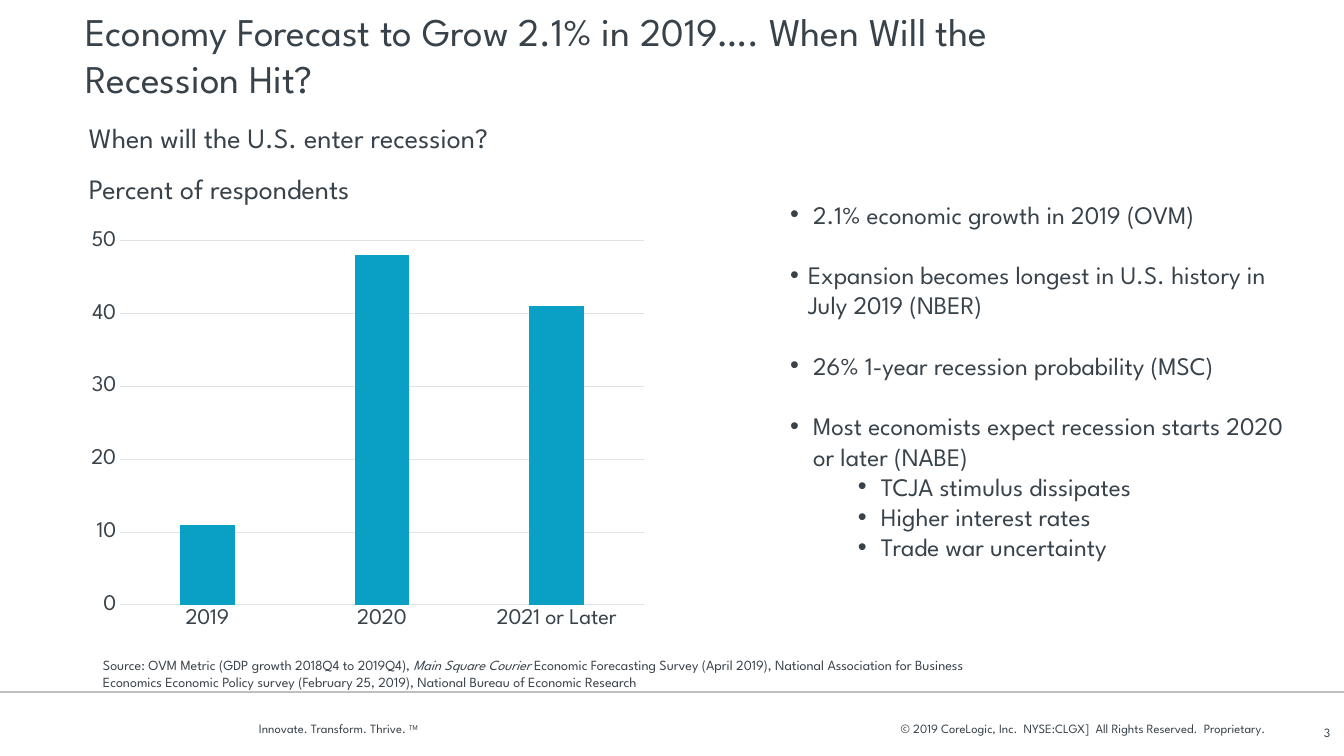
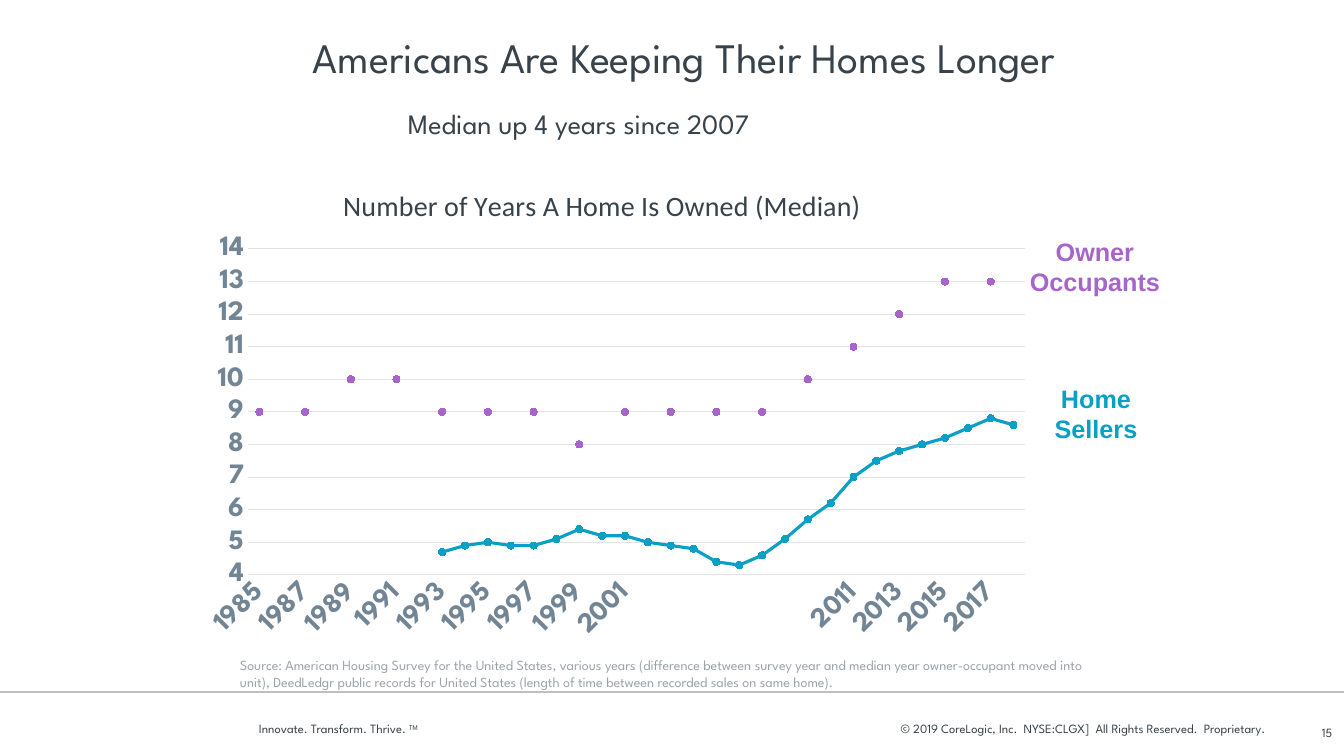
"""Build two housing economy slides with native charts and text."""
from dataclasses import dataclass

from lxml import etree
from pptx import Presentation
from pptx.chart.data import CategoryChartData
from pptx.dml.color import RGBColor
from pptx.enum.chart import XL_CHART_TYPE, XL_MARKER_STYLE, XL_TICK_MARK
from pptx.enum.shapes import MSO_CONNECTOR
from pptx.enum.text import MSO_ANCHOR, PP_ALIGN
from pptx.oxml.ns import qn
from pptx.util import Pt

PX = 914400 / 100.8
LEFT, CENTER, RIGHT = PP_ALIGN.LEFT, PP_ALIGN.CENTER, PP_ALIGN.RIGHT
TOP, MIDDLE, BOTTOM = MSO_ANCHOR.TOP, MSO_ANCHOR.MIDDLE, MSO_ANCHOR.BOTTOM
COLUMNS, LINES = XL_CHART_TYPE.COLUMN_CLUSTERED, XL_CHART_TYPE.LINE_MARKERS
CIRCLE, NO_TICK = XL_MARKER_STYLE.CIRCLE, XL_TICK_MARK.NONE
STRAIGHT = MSO_CONNECTOR.STRAIGHT


@dataclass(frozen=True)
class Theme:
    """Colours, fonts and type sizes of the deck."""
    ink: str = "38424A"
    slate: str = "728595"
    muted: str = "9AA3AD"
    rule: str = "BFBFBF"
    grid: str = "DFE3E6"
    blue: str = "0AA0C6"
    purple: str = "A765CB"
    font: str = "League Spartan"
    label_font: str = "Arial"
    chart_title_font: str = "Calibri"
    title: int = 28
    large_title: int = 30
    subtitle: int = 20
    body: int = 18
    axis: int = 16
    large_axis: int = 20
    source: int = 10
    footer: int = 9


def px(length):
    """Turn pixels into EMU."""
    return round(length * PX)


def set_layout(parent, index, **values):
    """Give a chart part a manual layout in fractions of the chart."""
    layout = parent.find(qn("c:layout"))
    if layout is None:
        layout = etree.Element(qn("c:layout"))
        parent.insert(index, layout)
    manual = etree.SubElement(layout, qn("c:manualLayout"))
    for name, value in values.items():
        etree.SubElement(manual, qn(f"c:{name}")).set("val", str(value))


class Deck:
    """Hold the theme, the presentation and the current slide."""

    def __init__(self, theme):
        self.theme = theme
        self.deck = Presentation()
        self.deck.slide_width, self.deck.slide_height = px(1344), px(756)
        self.page = None

    def style(self, font, size, color=None, name=None, bold=False):
        """Set size, colour, typeface and weight of a font."""
        font.size, font.bold = Pt(size), bold
        font.name = name or self.theme.font
        font.color.rgb = RGBColor.from_string(color or self.theme.ink)

    def add_page(self, number):
        """Start a slide with its footer."""
        self.page = self.deck.slides.add_slide(self.deck.slide_layouts[6])
        rule = self.page.shapes.add_connector(STRAIGHT, 0, px(692), px(1344), px(692))
        rule.line.width = Pt(0.75)
        rule.line.color.rgb = RGBColor.from_string(self.theme.rule)
        etree.SubElement(rule.element.spPr, qn("a:effectLst"))
        size = self.theme.footer
        slogan = self.text((259, 708, 264, 42), ["Innovate. Transform. Thrive. "],
                           size, anchor=MIDDLE, inset=0)
        self.span(slogan, "TM").font._element.set("baseline", "30000")
        notice = "© 2019 CoreLogic, Inc.  NYSE:CLGX]  All Rights Reserved.  Proprietary."
        self.text((675, 708, 590, 42), [notice], size, align=RIGHT, anchor=MIDDLE, inset=0)
        self.text((1310, 712, 34, 42), [str(number)], size, align=CENTER,
                  anchor=MIDDLE, inset=0)

    def span(self, para, words, italic=None):
        """Add a run to a paragraph."""
        span = para.add_run()
        span.text, span.font.italic = words, italic
        return span

    def frame(self, area, anchor=TOP, inset=10):
        """Add a wrapping text box and return its frame."""
        box = self.page.shapes.add_textbox(*map(px, area))
        frame = box.text_frame
        frame.word_wrap, frame.vertical_anchor = True, anchor
        frame.margin_left = frame.margin_right = px(inset)
        frame.margin_top = frame.margin_bottom = px(5)
        return frame

    def text(self, area, lines, size, color=None, name=None, bold=False,
             align=LEFT, anchor=TOP, inset=10, gap=0):
        """Add lines of text and return the last paragraph."""
        frame = self.frame(area, anchor, inset)
        for index, line in enumerate(lines):
            para = frame.add_paragraph() if index else frame.paragraphs[0]
            para.alignment = align
            if index:
                para.space_before = Pt(gap)
            self.span(para, line)
            self.style(para.font, size, color, name, bold)
        return para

    def title(self, area, words, size, align=LEFT):
        """Add a slide title."""
        self.text(area, [words], size, align=align, anchor=BOTTOM, inset=5)

    def bullets(self, area, items):
        """Add bullets given as words, left margin, hanging indent and gap."""
        frame = self.frame(area)
        for index, (words, margin, hang, gap) in enumerate(items):
            para = frame.add_paragraph() if index else frame.paragraphs[0]
            if gap:
                para.space_before = Pt(gap)
            properties = para._p.get_or_add_pPr()
            properties.set("marL", str(px(margin)))
            properties.set("indent", str(px(-hang)))
            etree.SubElement(properties, qn("a:buFont")).set("typeface", "Arial")
            etree.SubElement(properties, qn("a:buChar")).set("char", "•")
            self.span(para, words)
            self.style(para.font, self.theme.body)

    def chart(self, kind, area, plot_area, categories, series, limits, size,
              color=None, bold=False):
        """Add a chart whose plot fills the given area of the slide."""
        data = CategoryChartData()
        data.categories = categories
        for index, (values, _) in enumerate(series, 1):
            data.add_series(f"Series {index}", values)
        chart = self.page.shapes.add_chart(kind, *map(px, area), data).chart
        chart.has_legend = chart.has_title = False
        self.style(chart.font, self.theme.source)
        left, top, width, height = area
        plot_left, plot_top, plot_width, plot_height = plot_area
        set_layout(next(chart.element.iter(qn("c:plotArea"))), 0,
                   layoutTarget="inner", xMode="edge", yMode="edge",
                   x=(plot_left - left) / width, y=(plot_top - top) / height,
                   w=plot_width / width, h=plot_height / height)
        value_axis, category_axis = chart.value_axis, chart.category_axis
        value_axis.minimum_scale, value_axis.maximum_scale, value_axis.major_unit = limits
        for axis in (value_axis, category_axis):
            axis.major_tick_mark = axis.minor_tick_mark = NO_TICK
            self.style(axis.tick_labels.font, size, color, bold=bold)
        value_axis.tick_labels.number_format = "General"
        value_axis.tick_labels.number_format_is_linked = False
        value_axis.has_major_gridlines = True
        value_axis.format.line.fill.background()
        for line in (value_axis.major_gridlines.format.line, category_axis.format.line):
            line.width = Pt(0.75)
            line.color.rgb = RGBColor.from_string(self.theme.grid)
        plot = chart.plots[0]
        plot.vary_by_categories = False
        for item, (_, shade) in zip(plot.series, series):
            self.paint(item, RGBColor.from_string(shade), kind)
        return chart

    def paint(self, item, shade, kind):
        """Colour one chart series."""
        if kind == COLUMNS:
            item.format.fill.solid()
            item.format.fill.fore_color.rgb = shade
            return
        item.smooth = False
        item.format.line.width = Pt(2.25)
        item.format.line.color.rgb = shade
        item.marker.style, item.marker.size = CIRCLE, 5
        item.marker.format.fill.solid()
        item.marker.format.fill.fore_color.rgb = shade
        item.marker.format.line.color.rgb = shade

    def chart_title(self, chart, words, left, top):
        """Title a chart at a fractional position."""
        para = chart.chart_title.text_frame.paragraphs[0]
        self.span(para, words)
        self.style(para.font, self.theme.subtitle, name=self.theme.chart_title_font)
        set_layout(chart.chart_title.element if hasattr(chart.chart_title, "element")
                   else next(chart.element.iter(qn("c:title"))), 1,
                   xMode="edge", yMode="edge", x=left, y=top)
        chart.chart_title.include_in_layout = False

    def slant_labels(self, chart, step):
        """Turn the category labels and show one in each step."""
        axis = next(chart.element.iter(qn("c:catAx")))
        next(axis.iter(qn("a:bodyPr"))).set("rot", "-2700000")
        skip = etree.Element(qn("c:tickLblSkip"))
        skip.set("val", str(step))
        axis.find(qn("c:noMultiLvlLbl")).addprevious(skip)


def recession_page(deck):
    """Build the recession forecast slide."""
    theme = deck.theme
    deck.add_page(3)
    deck.title((80, 5, 927, 101),
               "Economy Forecast to Grow 2.1% in 2019…. When Will the Recession Hit?",
               theme.title)
    deck.text((79, 116, 778, 95),
              ["When will the U.S. enter recession?", "Percent of respondents"],
              theme.subtitle, gap=12)
    chart = deck.chart(COLUMNS, (81, 223, 576, 416), (120, 241, 524, 364),
                       ["2019", "2020", "2021 or Later"],
                       [([11, 48, 41], theme.blue)], (0, 50, 10), theme.axis)
    chart.plots[0].gap_width, chart.plots[0].overlap = 219, -27
    gap = 21.6
    deck.bullets((780, 194, 518, 377), [
        ("2.1% economic growth in 2019 (OVM)", 23, 23, 0),
        ("Expansion becomes longest in U.S. history in July 2019 (NBER)", 18, 18, gap),
        ("26% 1-year recession probability (MSC)", 23, 23, gap),
        ("Most economists expect recession starts 2020 or later (NABE)", 23, 23, gap),
        ("TCJA stimulus dissipates", 91, 23, 0),
        ("Higher interest rates", 91, 23, 0),
        ("Trade war uncertainty", 91, 23, 0)])
    source = deck.text((93, 652, 883, 44),
                       ["Source: OVM Metric (GDP growth 2018Q4 to 2019Q4), "], theme.source)
    deck.span(source, "Main Square Courier ", italic=True)
    deck.span(source, "Economic Forecasting Survey (April 2019), National Association for "
              "Business Economics Economic Policy survey (February 25, 2019), "
              "National Bureau of Economic Research")


def ownership_page(deck):
    """Build the length of ownership slide."""
    theme = deck.theme
    deck.add_page(15)
    deck.title((200, 28, 969, 59), "Americans Are Keeping Their Homes Longer",
               theme.large_title, CENTER)
    deck.text((398, 102, 643, 50), ["Median up 4 years since 2007"], theme.subtitle)
    surveys = [9, 9, 10, 10, 9, 9, 9, 8, 9, 9, 9, 9, 10, 11, 12, 13, 13]
    owners = [value for survey in surveys for value in (survey, None)]
    sellers = [None] * 8 + [4.7, 4.9, 5, 4.9, 4.9, 5.1, 5.4, 5.2, 5.2, 5, 4.9, 4.8, 4.4,
                            4.3, 4.6, 5.1, 5.7, 6.2, 7, 7.5, 7.8, 8, 8.2, 8.5, 8.8, 8.6]
    chart = deck.chart(LINES, (194, 166, 848, 488), (248, 249, 777, 326),
                       [str(year) for year in range(1985, 2019)],
                       [(owners, theme.purple), (sellers, theme.blue)],
                       (4, 14, 1), theme.large_axis, theme.slate, True)
    deck.chart_title(chart, "Number of Years A Home Is Owned (Median)", 0.17, 0.03)
    deck.slant_labels(chart, 2)
    for area, words, color in (((1041, 378, 110, 72), "Home Sellers", theme.blue),
                               ((1015, 231, 160, 72), "Owner Occupants", theme.purple)):
        deck.text(area, [words], theme.body, color, theme.label_font, True, CENTER)
    deck.text((230, 652, 886, 44),
              ["Source: American Housing Survey for the United States, various years "
               "(difference between survey year and median year owner-occupant moved into "
               "unit), DeedLedgr public records for United States (length of time between "
               "recorded sales on same home)."], theme.source, theme.muted)


def main():
    """Build and save the deck."""
    deck = Deck(Theme())
    recession_page(deck)
    ownership_page(deck)
    deck.deck.save("out.pptx")


if __name__ == "__main__":
    main()
